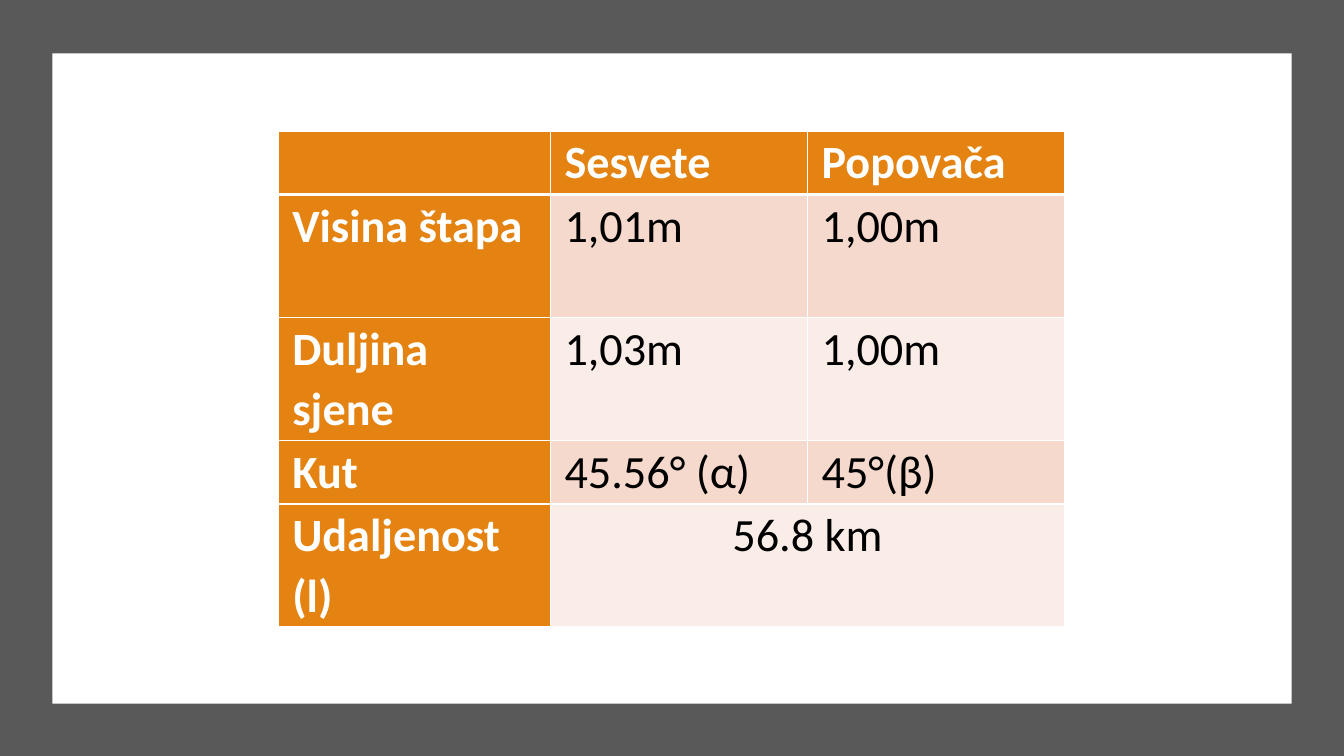
from dataclasses import dataclass

from lxml.etree import SubElement
from pptx import Presentation
from pptx.dml.color import RGBColor
from pptx.enum.shapes import MSO_SHAPE as Shape
from pptx.enum.text import PP_ALIGN as Align
from pptx.oxml.ns import qn
from pptx.util import Inches, Pt


@dataclass(frozen=True)
class Theme:
    font: str = "Calibri"
    size: float = 33
    spacing: float = 1.07
    frame: str = "595959"
    white: str = "FFFFFF"
    black: str = "000000"
    header: str = "E48312"
    bands: tuple = ("F5D9CC", "FAEDE7")


THEME = Theme()
COLUMNS = [2.7, 2.55, 2.55]
ROW_HEIGHTS = [0.63, 1.22, 1.22, 0.63, 1.22]
MEASUREMENTS = [
    ["", "Sesvete", "Popovača"],
    ["Visina štapa", "1,01m", "1,00m"],
    ["Duljina sjene", "1,03m", "1,00m"],
    ["Kut", "45.56° (α)", "45°(β)"],
    ["Udaljenost (l)", "56.8 km", ""],
]


def paint(target, color):
    target.fill.solid()
    target.fill.fore_color.rgb = RGBColor.from_string(color)


def write(frame, text, color=THEME.black, bold=False, align=Align.JUSTIFY):
    para = frame.paragraphs[0]
    para.alignment = align
    para.line_spacing = THEME.spacing
    span = para.add_run()
    span.text = text
    span.font.name = THEME.font
    span.font.size = Pt(THEME.size)
    span.font.bold = bold
    span.font.color.rgb = RGBColor.from_string(color)


class SlideBuilder:
    def __init__(self, deck, theme):
        self.theme = theme
        self.slide = deck.slides.add_slide(deck.slide_layouts[6])

    def panel(self, left, top, width, height, color):
        box = self.slide.shapes.add_shape(
            Shape.RECTANGLE, *map(Inches, (left, top, width, height)))
        box.shadow.inherit = False
        box.line.fill.background()
        paint(box, color)

    def borders(self, cell, widths):
        properties = cell._tc.get_or_add_tcPr()
        for side, width in zip("LRTB", widths):
            line = SubElement(properties, qn(f"a:ln{side}"), w=str(Pt(width)))
            fill = SubElement(line, qn("a:solidFill"))
            SubElement(fill, qn("a:srgbClr"), val=self.theme.white)

    def table(self, left, top, columns, heights, rows):
        table = self.slide.shapes.add_table(
            len(rows), len(columns), Inches(left), Inches(top),
            Inches(sum(columns)), Inches(sum(heights))).table
        table.horz_banding = False
        for column, width in zip(table.columns, columns):
            column.width = Inches(width)
        for row, height in zip(table.rows, heights):
            row.height = Inches(height)

        # The distance is shared by both places
        last = len(rows) - 1
        table.cell(last, 1).merge(table.cell(last, 2))

        for r, values in enumerate(rows):
            for c, text in enumerate(values):
                cell = table.cell(r, c)
                heading = r == 0 or c == 0
                cell.margin_left = cell.margin_right = Inches(0.14)
                cell.margin_top = cell.margin_bottom = 0
                # Thick rule between the header row and the body
                self.borders(cell, (1, 1, 3 if r == 1 else 1, 3 if r == 0 else 1))
                paint(cell, self.theme.header if heading
                      else self.theme.bands[(r - 1) % 2])
                if text:
                    write(cell.text_frame, text,
                          color=self.theme.white if heading else self.theme.black,
                          bold=heading,
                          align=Align.CENTER if cell.is_merge_origin else Align.JUSTIFY)


def main():
    deck = Presentation()
    deck.slide_width, deck.slide_height = Inches(13.33), Inches(7.5)
    page = SlideBuilder(deck, THEME)

    # Grey frame around a white page
    page.panel(0, 0, 13.33, 7.5, THEME.frame)
    page.panel(0.52, 0.53, 12.29, 6.45, THEME.white)

    # Measurements
    page.table(2.76, 1.3, COLUMNS, ROW_HEIGHTS, MEASUREMENTS)

    deck.save("out.pptx")


if __name__ == "__main__":
    main()
